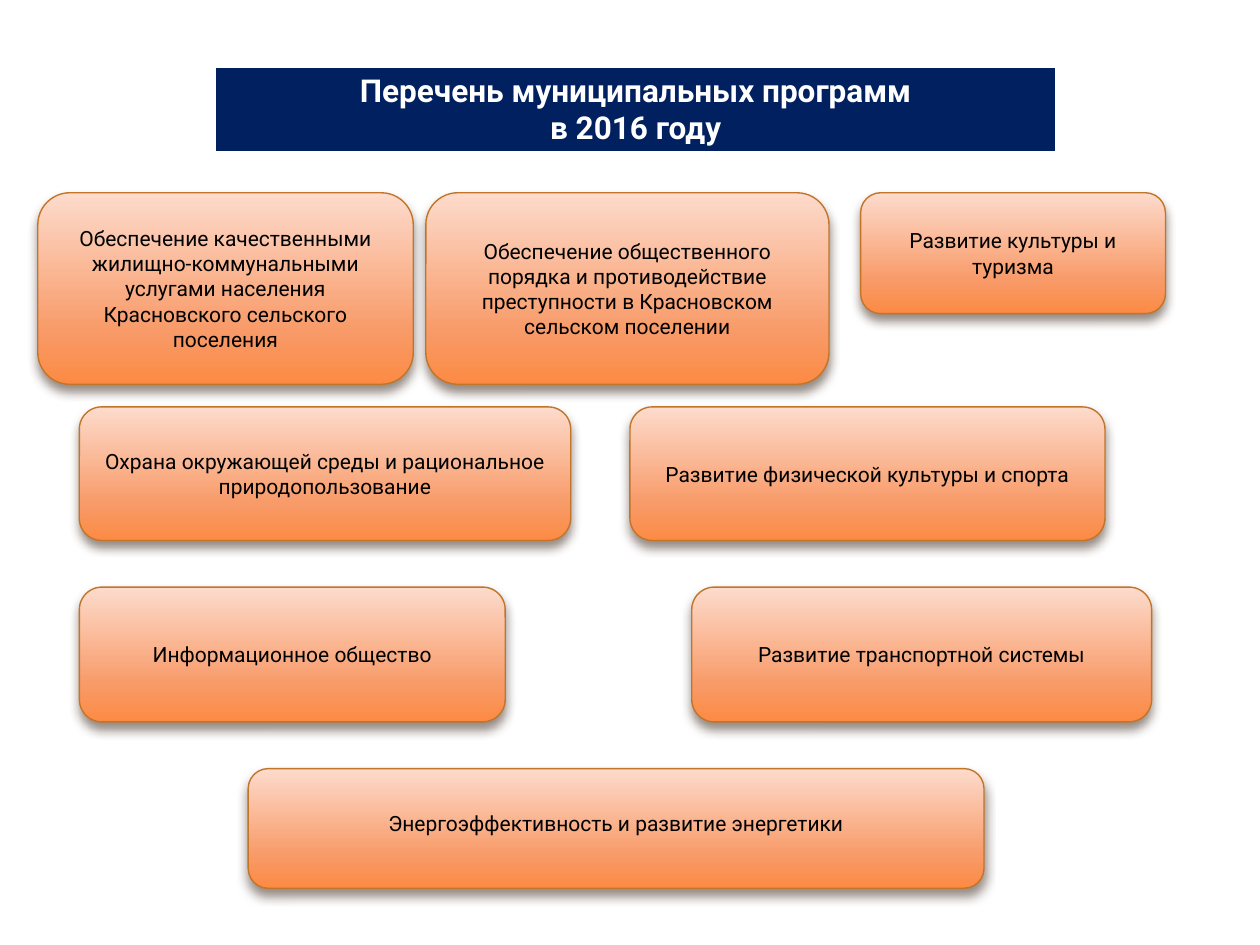
from copy import deepcopy
from dataclasses import dataclass

from lxml.etree import SubElement
from pptx import Presentation
from pptx.dml.color import RGBColor
from pptx.enum.shapes import MSO_SHAPE
from pptx.enum.text import MSO_ANCHOR, PP_ALIGN
from pptx.oxml import parse_xml
from pptx.oxml.ns import nsdecls, qn
from pptx.slide import Slide
from pptx.table import _Cell
from pptx.text.text import _Paragraph
from pptx.util import Inches, Pt

FONT = "Roboto"
NAVY = RGBColor(0x00, 0x20, 0x60)
WHITE = RGBColor(0xFF, 0xFF, 0xFF)
BLACK = RGBColor(0x00, 0x00, 0x00)
OUTLINE = RGBColor(0xC1, 0x75, 0x29)
SHADOW = RGBColor(0x4E, 0x3B, 0x30)
GRADIENT = (
    (0, RGBColor(0xFD, 0xDB, 0xCC)),
    (0.72, RGBColor(0xF8, 0x9B, 0x69)),
    (1, RGBColor(0xFC, 0x8A, 0x43)),
)
TITLE = ("Перечень муниципальных программ", "в 2016 году")
BORDERS = (("lnL", 1), ("lnR", 1), ("lnT", 1), ("lnB", 3))


@dataclass
class Program:
    text: str
    left: float
    width: float
    bottom_inset: float = 0.05


@dataclass
class Row:
    top: float
    height: float
    programs: tuple[Program, ...]


ROWS = (
    Row(1.53, 1.52, (
        Program("Обеспечение качественными жилищно-коммунальными услугами "
                "населения Красновского сельского поселения", 0.3, 2.98),
        Program("Обеспечение общественного порядка и противодействие "
                "преступности в Красновском сельском поселении", 3.38, 3.2),
    )),
    Row(1.53, 0.96, (Program("Развитие культуры и туризма", 6.83, 2.42),)),
    Row(3.23, 1.06, (
        Program("Охрана окружающей среды и рациональное природопользование", 0.63, 3.9),
        Program("Развитие физической культуры и спорта", 5, 3.77),
    )),
    Row(4.66, 1.07, (
        Program("Информационное общество", 0.63, 3.38),
        Program("Развитие транспортной системы", 5.49, 3.65),
    )),
    Row(6.1, 0.95, (
        Program("Энергоэффективность и развитие энергетики", 1.97, 5.84, 0.13),
    )),
)


def style_paragraph(p: _Paragraph, size: int, color: RGBColor, bold: bool = False) -> None:
    p.alignment = PP_ALIGN.CENTER
    p.font.name = FONT
    p.font.size = Pt(size)
    p.font.bold = bold
    p.font.color.rgb = color


def add_borders(cell: _Cell) -> None:
    tc_pr = cell._tc.get_or_add_tcPr()
    for i, (tag, width) in enumerate(BORDERS):
        tc_pr.insert(i, parse_xml(
            f'<a:{tag} {nsdecls("a")} w="{Pt(width)}"><a:solidFill>'
            f'<a:srgbClr val="{WHITE}"/></a:solidFill></a:{tag}>'))


def add_title(s: Slide) -> None:
    table = s.shapes.add_table(
        1, 1, Inches(1.71), Inches(0.53), Inches(6.67), Inches(0.67)).table
    cell = table.cell(0, 0)
    cell.fill.solid()
    cell.fill.fore_color.rgb = NAVY
    add_borders(cell)
    tf = cell.text_frame
    tf.text = "\n".join(TITLE)
    for p in tf.paragraphs:
        style_paragraph(p, 18, WHITE, bold=True)


def add_program(s: Slide, row: Row, program: Program) -> None:
    sp = s.shapes.add_shape(
        MSO_SHAPE.ROUNDED_RECTANGLE, Inches(program.left), Inches(row.top),
        Inches(program.width), Inches(row.height))
    sp.fill.gradient()
    sp.fill.gradient_angle = 270
    sp_pr = sp._element.spPr
    stops = sp_pr.find(".//" + qn("a:gsLst"))
    stops.append(deepcopy(stops[-1]))
    for stop, (position, color) in zip(sp.fill.gradient_stops, GRADIENT):
        stop.position = position
        stop.color.rgb = color
    sp.line.color.rgb = OUTLINE
    sp.line.width = Pt(0.79)

    sp.shadow.inherit = False
    shadow = SubElement(
        sp_pr.find(qn("a:effectLst")), qn("a:outerShdw"), blurRad=str(Pt(6)),
        dist=str(Pt(4)), dir="5400000", rotWithShape="0")
    color = SubElement(shadow, qn("a:srgbClr"), val=str(SHADOW))
    SubElement(color, qn("a:alpha"), val="60000")

    tf = sp.text_frame
    tf.word_wrap = True
    tf.vertical_anchor = MSO_ANCHOR.MIDDLE
    tf.margin_bottom = Inches(program.bottom_inset)
    tf.text = program.text
    style_paragraph(tf.paragraphs[0], 12, BLACK)


def main() -> None:
    prs = Presentation()
    prs.slide_width = Inches(10)
    prs.slide_height = Inches(7.5)
    s = prs.slides.add_slide(prs.slide_layouts[6])
    add_title(s)
    for row in ROWS:
        for program in row.programs:
            add_program(s, row, program)
    prs.save("out.pptx")


if __name__ == "__main__":
    main()
